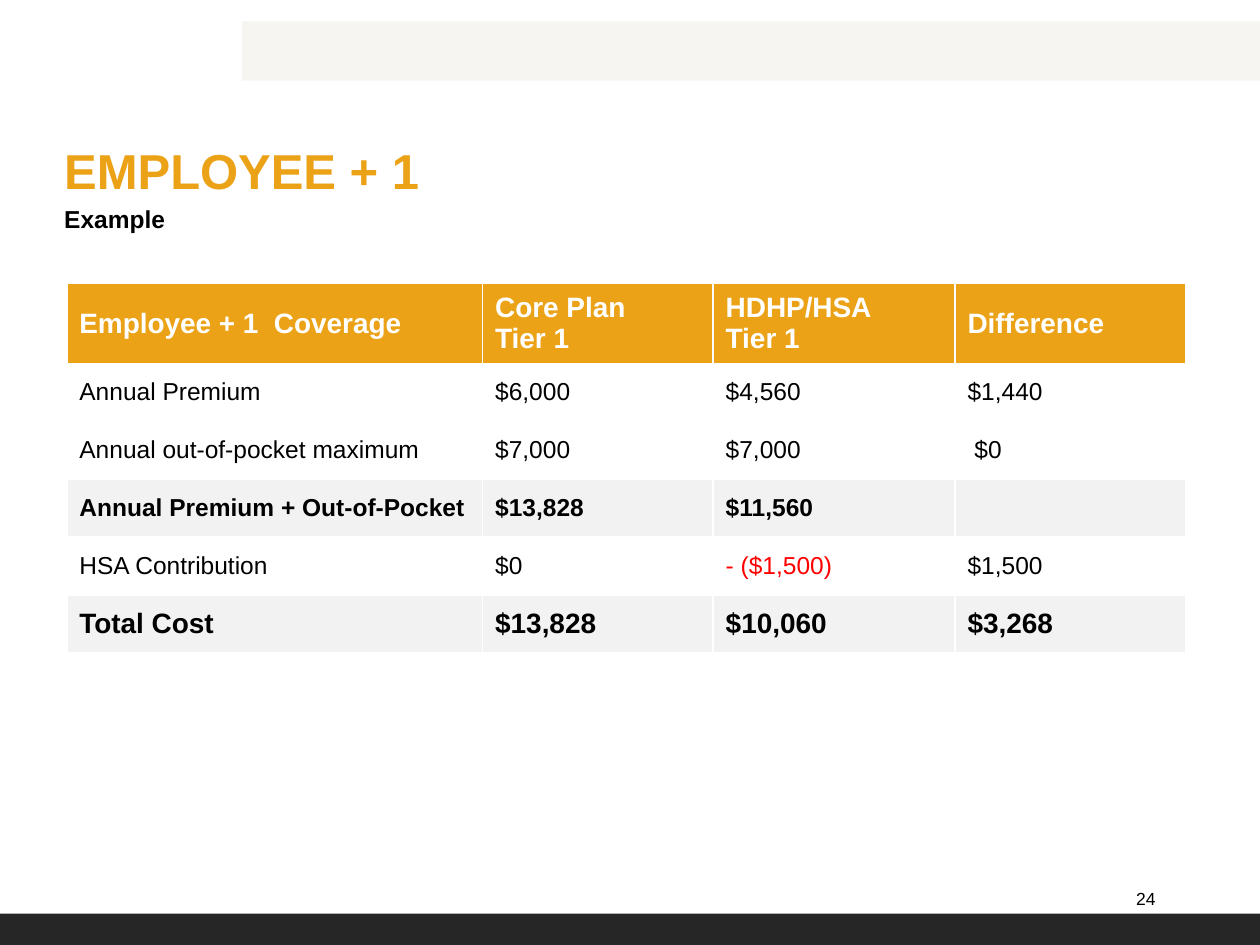
"""Build the Employee + 1 coverage cost comparison slide."""
from pptx import Presentation, util as u
from pptx.dml.color import RGBColor
from pptx.enum import shapes, text
from pptx.oxml import parse_xml
from pptx.oxml.ns import nsdecls


def paint(target, color):
    target.solid()
    target.fore_color.rgb = RGBColor.from_string(color)


def write(frame, words, size=14, color="000000", bold=False, align=text.PP_ALIGN.LEFT,
          anchor=text.MSO_ANCHOR.MIDDLE, margins=(0, 0, 0, 0)):
    frame.text = words
    frame.word_wrap = True
    frame.vertical_anchor = anchor
    frame.margin_left, frame.margin_top, frame.margin_right, frame.margin_bottom = map(u.Inches, margins)
    for line in frame.paragraphs:
        line.alignment = align
        line.font.name = "Arial"
        line.font.size = u.Pt(size)
        line.font.bold = bold
        paint(line.font.fill, color)


GOLD, WHITE, GRAY, RED = "EBA217", "FFFFFF", "F2F2F2", "FF0000"
deck = Presentation()
deck.slide_width, deck.slide_height = u.Inches(10), u.Inches(7.5)
slide = deck.slides.add_slide(deck.slide_layouts[5])

for left, top, width, height, color in [
    (1.92, 0.17, 8.08, 0.47, "F7F5F2"),
    (0, 7.25, 10, 0.25, "262626"),
]:
    band = slide.shapes.add_shape(shapes.MSO_SHAPE.RECTANGLE, *map(u.Inches, (left, top, width, height)))
    band.shadow.inherit = False
    paint(band.fill, color)
    band.line.fill.background()

title = slide.shapes.title
title.left, title.top, title.width, title.height = map(u.Inches, (0.51, 1.08, 8.8, 0.5))
write(title.text_frame, "EMPLOYEE + 1", size=28, color=GOLD, bold=True, anchor=text.MSO_ANCHOR.BOTTOM)

subtitle = slide.shapes.add_textbox(*map(u.Inches, (0.51, 1.59, 8.8, 0.33))).text_frame
write(subtitle, "Example", bold=True, anchor=text.MSO_ANCHOR.TOP)
subtitle.paragraphs[0].line_spacing = 1.14
subtitle.paragraphs[0].space_after = u.Pt(6)

page_number = slide.shapes.add_textbox(*map(u.Inches, (8.94, 6.93, 0.33, 0.4))).text_frame
write(page_number, "24", size=10, align=text.PP_ALIGN.RIGHT, margins=(0, 0, 0.1, 0))

costs = [
    ("Employee + 1  Coverage", "Core Plan\nTier 1", "HDHP/HSA\nTier 1", "Difference"),
    ("Annual Premium", "$6,000", "$4,560", "$1,440"),
    ("Annual out-of-pocket maximum", "$7,000", "$7,000", " $0"),
    ("Annual Premium + Out-of-Pocket", "$13,828", "$11,560", ""),
    ("HSA Contribution", "$0", "- ($1,500)", "$1,500"),
    ("Total Cost", "$13,828", "$10,060", "$3,268"),
]
row_looks = [(GOLD, 16, True), (WHITE, 14, False), (WHITE, 14, False),
             (GRAY, 14, True), (WHITE, 14, False), (GRAY, 16, True)]
row_heights = [0.59] + [0.46] * 5
column_widths = [3.3, 1.83, 1.92, 1.83]

comparison = slide.shapes.add_table(
    len(costs), len(column_widths), u.Inches(0.53), u.Inches(2.25),
    u.Inches(sum(column_widths)), u.Inches(sum(row_heights))).table
comparison.horz_banding = False
for column, width in zip(comparison.columns, column_widths):
    column.width = u.Inches(width)

for row, height, entries, (fill, size, bold) in zip(comparison.rows, row_heights, costs, row_looks):
    row.height = u.Inches(height)
    for cell, entry in zip(row.cells, entries):
        color = WHITE if fill == GOLD else RED if entry.startswith("-") else "000000"
        write(cell.text_frame, entry, size=size, color=color, bold=bold)
        cell.vertical_anchor = text.MSO_ANCHOR.MIDDLE
        cell.margin_left = cell.margin_right = u.Inches(0.1)
        cell.margin_top = cell.margin_bottom = u.Inches(0.05)
        properties = cell._tc.get_or_add_tcPr()
        for side in ("lnL", "lnR", "lnT", "lnB"):
            properties.append(parse_xml(
                f'<a:{side} {nsdecls("a")} w="12700"><a:solidFill>'
                f'<a:srgbClr val="{WHITE}"/></a:solidFill></a:{side}>'))
        paint(cell.fill, fill)

deck.save("out.pptx")
